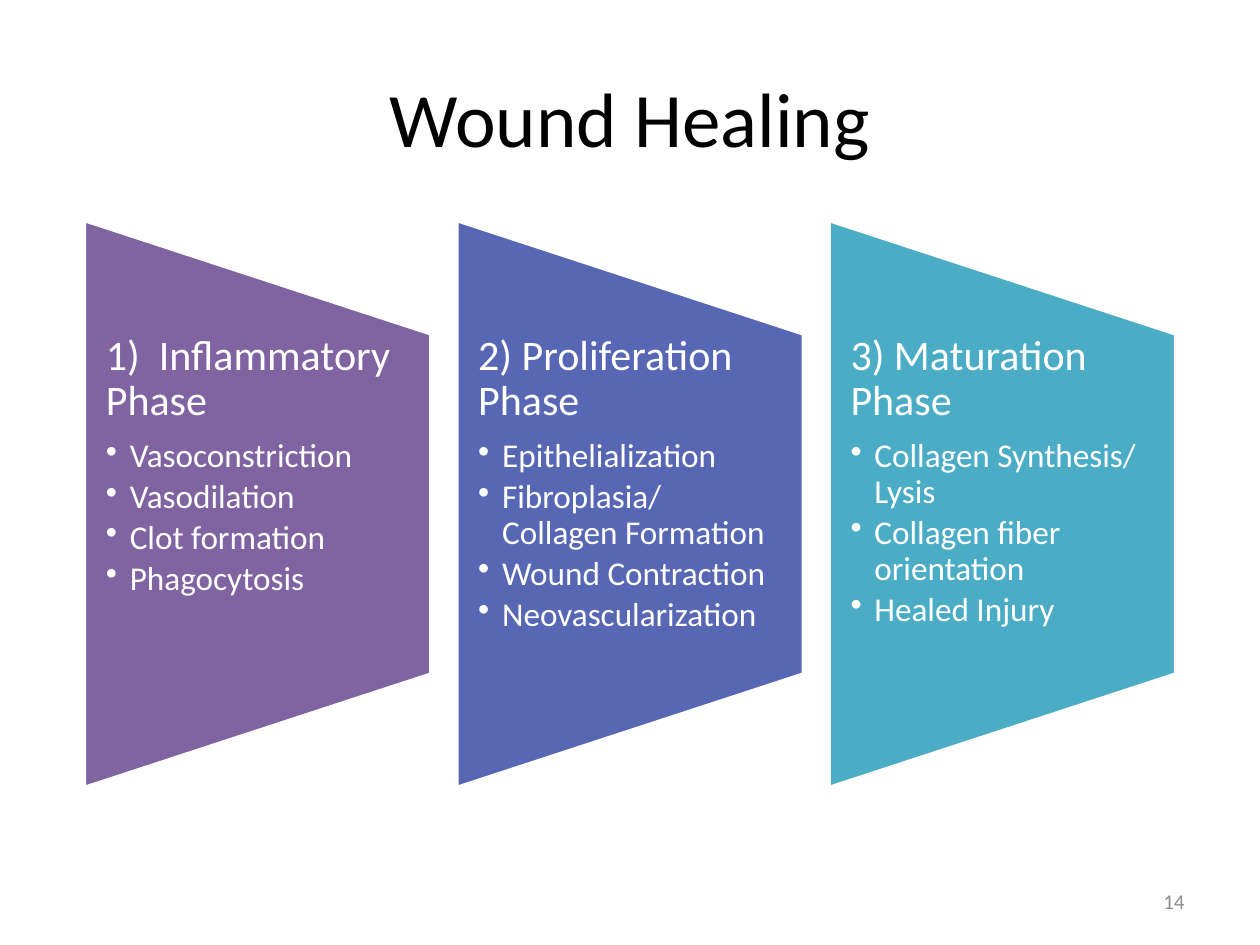
"""Build the Wound Healing slide: three tapered panels, one for each healing phase."""
from lxml import etree
from pptx import Presentation
from pptx.dml.color import RGBColor
from pptx.enum.shapes import MSO_SHAPE
from pptx.enum.text import MSO_ANCHOR, PP_ALIGN
from pptx.oxml.ns import qn
from pptx.util import Inches, Pt

TAPER = MSO_SHAPE.FLOWCHART_MANUAL_OPERATION
TOP, MIDDLE = MSO_ANCHOR.TOP, MSO_ANCHOR.MIDDLE
LEFT, CENTER, RIGHT = PP_ALIGN.LEFT, PP_ALIGN.CENTER, PP_ALIGN.RIGHT

TITLE = "Wound Healing"
PAGE = "14"
PHASES = [
    ("1)  Inflammatory Phase", "8064A2",
     ["Vasoconstriction", "Vasodilation", "Clot formation", "Phagocytosis"]),
    ("2) Proliferation Phase", "5767B4",
     ["Epithelialization", "Fibroplasia/ Collagen Formation",
      "Wound Contraction", "Neovascularization"]),
    ("3) Maturation Phase", "4BACC6",
     ["Collagen Synthesis/ Lysis", "Collagen fiber orientation", "Healed Injury"]),
]

THEME = {
    "font": "Calibri",
    "title": (44, "000000"),
    "heading": (24, "FFFFFF"),
    "bullet": (19, "FFFFFF"),
    "page": (12, "8C8C8C"),
    "outline": "FFFFFF",
}

SLIDE_W, SLIDE_H = 10, 7.5
MARGIN = 0.67
PANEL_W, PANEL_H, PANEL_MID = 2.75, 4.5, 4
TEXT_H = 2.7
INDENT = 0.19
GAP = (SLIDE_W - 2 * MARGIN - len(PHASES) * PANEL_W) / (len(PHASES) - 1)


def box(left, top, width, height):
    return [Inches(v) for v in (left, top, width, height)]


def format_frame(tf, anchor, side=0.1, edge=0.05):
    values = {
        "word_wrap": True, "vertical_anchor": anchor,
        "margin_left": Inches(side), "margin_right": Inches(side),
        "margin_top": Inches(edge), "margin_bottom": Inches(edge),
    }
    for name, value in values.items():
        setattr(tf, name, value)


def write(p, text, style, align=LEFT):
    size, color = THEME[style]
    p.alignment = align
    r = p.add_run()
    r.text = text
    r.font.name = THEME["font"]
    r.font.size = Pt(size)
    r.font.color.rgb = RGBColor.from_string(color)


def space(p, style, share):
    p.line_spacing = 0.9
    p.space_after = Pt(THEME[style][0] * share)


def add_bullet(p):
    p.level = 1
    pPr = p._p.get_or_add_pPr()
    pPr.set("marL", str(Inches(INDENT)))
    pPr.set("indent", str(-Inches(INDENT)))
    etree.SubElement(pPr, qn("a:buChar")).set("char", "•")


def add_panel(s, left, heading, color, items):
    panel = s.shapes.add_shape(TAPER, *box(
        left + (PANEL_W - PANEL_H) / 2, PANEL_MID - PANEL_W / 2, PANEL_H, PANEL_W))
    panel.rotation = 270
    panel.shadow.inherit = False
    panel.fill.solid()
    panel.fill.fore_color.rgb = RGBColor.from_string(color)
    panel.line.color.rgb = RGBColor.from_string(THEME["outline"])
    panel.line.width = Pt(2)

    tf = s.shapes.add_textbox(
        *box(left, PANEL_MID - TEXT_H / 2, PANEL_W, TEXT_H)).text_frame
    format_frame(tf, TOP, side=0.17, edge=0)
    p = tf.paragraphs[0]
    write(p, heading, "heading")
    space(p, "heading", 0.35)
    for item in items:
        p = tf.add_paragraph()
        write(p, item, "bullet")
        space(p, "bullet", 0.15)
        add_bullet(p)


def main():
    prs = Presentation()
    prs.slide_width, prs.slide_height = Inches(SLIDE_W), Inches(SLIDE_H)
    s = prs.slides.add_slide(prs.slide_layouts[5])

    title = s.shapes.title
    title.left, title.top, title.width, title.height = box(0.5, 0.3, 9, 1.25)
    format_frame(title.text_frame, MIDDLE)
    write(title.text_frame.paragraphs[0], TITLE, "title", CENTER)

    for i, phase in enumerate(PHASES):
        add_panel(s, MARGIN + i * (PANEL_W + GAP), *phase)

    tf = s.shapes.add_textbox(*box(7.17, 6.95, 2.33, 0.4)).text_frame
    format_frame(tf, MIDDLE)
    write(tf.paragraphs[0], PAGE, "page", RIGHT)

    prs.save("out.pptx")


if __name__ == "__main__":
    main()
